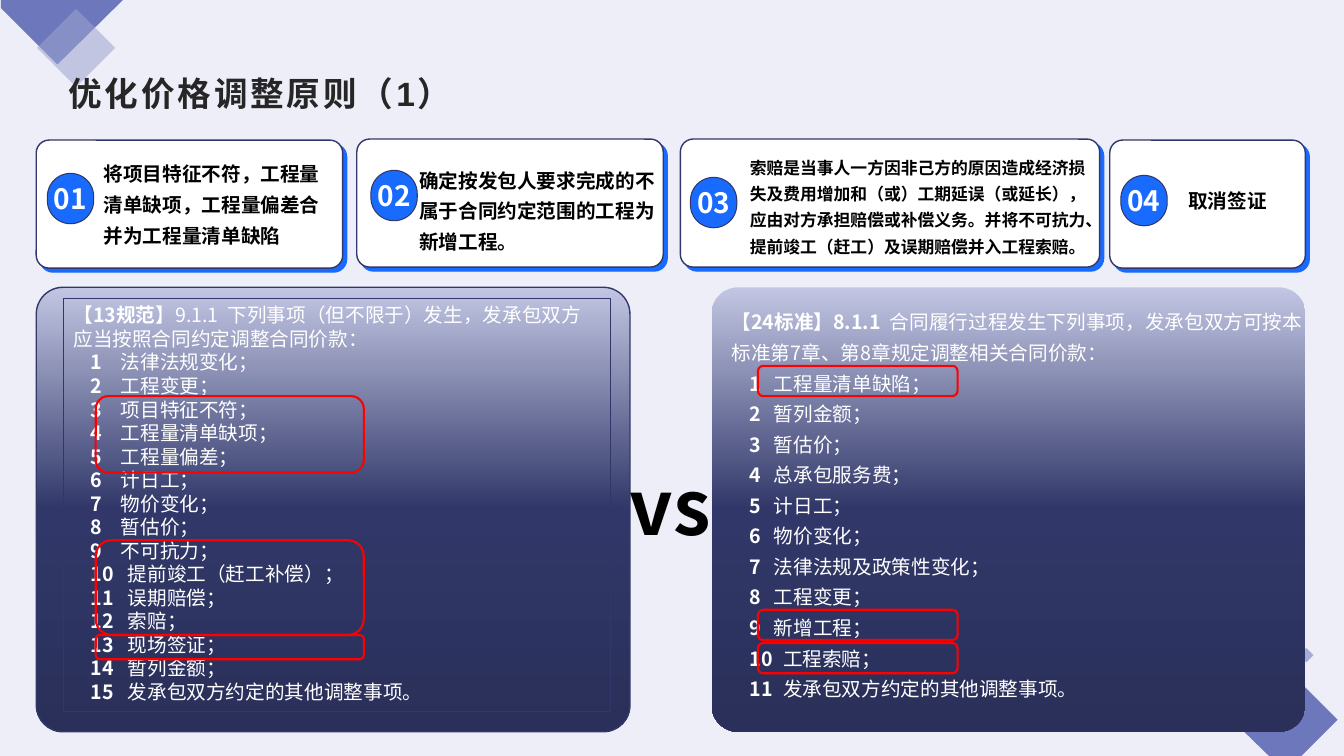
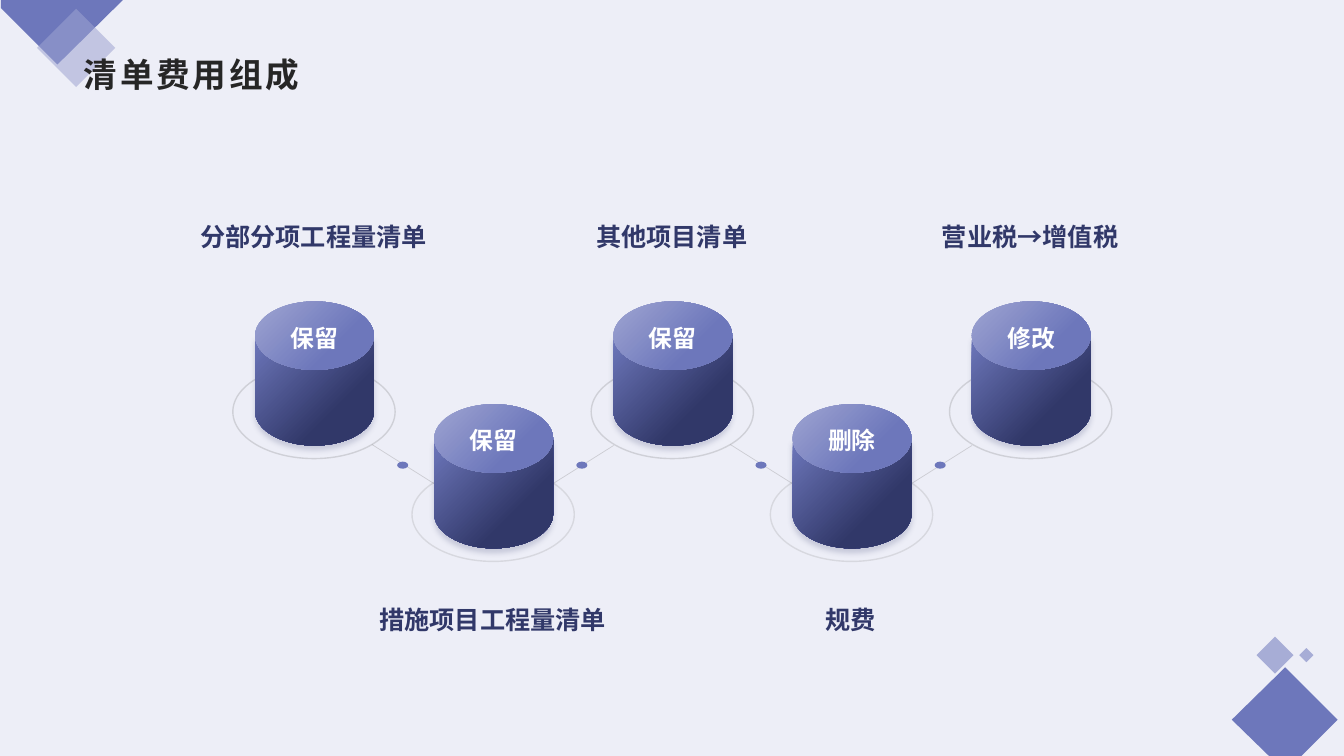
from lxml import etree
from pptx import Presentation
from pptx.dml.color import RGBColor
from pptx.enum.shapes import MSO_CONNECTOR, MSO_SHAPE
from pptx.enum.text import MSO_ANCHOR, MSO_AUTO_SIZE, PP_ALIGN
from pptx.oxml.ns import qn
from pptx.util import Inches, Pt

# Shared look
PALE = RGBColor(0xED, 0xEE, 0xF7)
VIOLET = RGBColor(0x6D, 0x77, 0xBB)
LILAC = RGBColor(0x9E, 0xA4, 0xD2)
MIST = RGBColor(0xC2, 0xC6, 0xE3)
NAVY = RGBColor(0x31, 0x38, 0x69)
DEEP = RGBColor(0x2A, 0x30, 0x59)
BLUE = RGBColor(0x19, 0x6B, 0xFF)
RED = RGBColor(0xFF, 0, 0)
INK = RGBColor(0x26, 0x26, 0x26)
GREY = RGBColor(0x80, 0x80, 0x80)
DARK_GREY = RGBColor(0x59, 0x59, 0x59)
WHITE = RGBColor(0xFF, 0xFF, 0xFF)
BLACK = RGBColor(0, 0, 0)
CJK = "Noto Sans CJK SC"
INSETS = (0.1, 0.05, 0.1, 0.05)
PANEL_GRAD = ([(0, MIST), (50, NAVY), (100, DEEP)], 90)
BODY_GRAD = ([(0, VIOLET), (68, NAVY)], 45)
LID_GRAD = ([(0, LILAC), (68, VIOLET)], 45)
CARD_SHADOW = dict(color=BLUE, alpha=100, blur=0, dist=4, angle=45)
SOFT_SHADOW = dict(color=NAVY, alpha=20, blur=4, dist=3, angle=90)

# Content: slide 1
TITLE_1 = ("优化价格调整原则（1）", (0.58, 0.67, 12, 0.77))
CARDS = [  # number, card box, badge position, text box, size, anchor, text
    ("01", (0.36, 1.39, 3.04, 1.27), (0.47, 1.72), (0.93, 1.48, 2.46, 1.02), 14,
     MSO_ANCHOR.BOTTOM, "将项目特征不符，工程量清单缺项，工程量偏差合并为工程量清单缺陷"),
    ("02", (3.54, 1.38, 3.04, 1.27), (3.68, 1.69), (4.06, 1.48, 2.55, 1.08), 14,
     MSO_ANCHOR.BOTTOM, "确定按发包人要求完成的不属于合同约定范围的工程为新增工程。"),
    ("03", (6.75, 1.38, 4.16, 1.27), (6.85, 1.76), (7.34, 1.39, 3.58, 1.27), 12,
     MSO_ANCHOR.MIDDLE, "索赔是当事人一方因非己方的原因造成经济损失及费用增加和（或）工期延误"
     "（或延长），应由对方承担赔偿或补偿义务。并将不可抗力、提前竣工（赶工）及误期赔偿并入工程索赔。"),
    ("04", (11.01, 1.39, 1.94, 1.27), (11.12, 1.74), (11.69, 1.72, 1.26, 0.44), 14,
     MSO_ANCHOR.BOTTOM, "取消签证"),
]
CLAUSES = [
    dict(panel=0.36, edge=NAVY, box=(0.63, 2.96, 5.43, 4.1), frame=NAVY, spacing=1.0,
         head=[("【13规范", True),
               ("】9.1.1  下列事项（但不限于）发生，发承包双方应当按照合同约定调整合同价款：", False)],
         number=0.17, text=(0.47, 0.54),
         items=["法律法规变化；", "工程变更；", "项目特征不符；", "工程量清单缺项；",
                "工程量偏差；", "计日工；", "物价变化；", "暂估价；", "不可抗力；",
                "提前竣工（赶工补偿）；", "误期赔偿；", "索赔；", "现场签证；",
                "暂列金额；", "发承包双方约定的其他调整事项。"],
         marks=(0.95, 2.66, [(3.93, 0.76), (5.36, 0.94), (6.3, 0.24)])),
    dict(panel=7.06, edge=None, box=(7.16, 2.96, 5.92, 4.1), frame=None, spacing=1.3,
         head=[("【24标准】8.1.1  ", True),
               ("合同履行过程发生下列事项，发承包双方可按本标准第7章、第8章规定调整相关合同价款：", False)],
         number=0.18, text=(0.42, 0.51),
         items=["工程量清单缺陷；", "暂列金额；", "暂估价；", "总承包服务费；", "计日工；",
                "物价变化；", "法律法规及政策性变化；", "工程变更；", "新增工程；",
                "工程索赔；", "发承包双方约定的其他调整事项。"],
         marks=(7.52, 1.98, [(3.63, 0.3), (6.05, 0.3), (6.38, 0.3)])),
]

# Content: slide 2
TITLE_2 = ("清单费用组成", (0.73, 0.48, 11.87, 0.48))
FEES = [("分部分项工程量清单", "保留"), ("措施项目工程量清单", "保留"),
        ("其他项目清单", "保留"), ("规费", "删除"), ("营业税→增值税", "修改")]
FIRST_X, LAST_X = 2.53, 9.64


def inches(values):
    return [Inches(v) for v in values]


def sub(parent, tag, **attrs):
    return etree.SubElement(parent, qn(tag), {k: str(v) for k, v in attrs.items()})


def set_alpha(fill_parent, percent):
    clr = next(fill_parent.iter(qn("a:srgbClr")))
    sub(clr, "a:alpha", val=percent * 1000)


def paint(sp, fill=None, line=None, width=0.75, alpha=None, line_alpha=None, shadow=None):
    """Fill (colour or gradient), outline and shadow of a shape."""
    sp.shadow.inherit = False
    if fill is None:
        sp.fill.background()
    else:
        sp.fill.solid()
        sp.fill.fore_color.rgb = fill if isinstance(fill, RGBColor) else WHITE
    sppr = sp._element.spPr
    solid = sppr.find(qn("a:solidFill"))
    if isinstance(fill, tuple) and not isinstance(fill, RGBColor):
        stops, angle = fill
        grad = etree.Element(qn("a:gradFill"), rotWithShape="1")
        gs_list = sub(grad, "a:gsLst")
        for pos, color in stops:
            sub(sub(gs_list, "a:gs", pos=pos * 1000), "a:srgbClr", val=color)
        sub(grad, "a:lin", ang=angle * 60000, scaled=0)
        sppr.replace(solid, grad)
    elif alpha:
        set_alpha(solid, alpha)
    if line is None:
        sp.line.fill.background()
    else:
        sp.line.color.rgb = line
        sp.line.width = Pt(width)
        if line_alpha:
            set_alpha(sppr.find(qn("a:ln")), line_alpha)
    if shadow:
        outer = sub(sppr.find(qn("a:effectLst")), "a:outerShdw", blurRad=Pt(shadow["blur"]),
                    dist=Pt(shadow["dist"]), dir=shadow["angle"] * 60000,
                    algn="ctr", rotWithShape=0)
        sub(sub(outer, "a:srgbClr", val=shadow["color"]), "a:alpha", val=shadow["alpha"] * 1000)
    return sp


def add_shape(s, kind, box, adj=None, **look):
    sp = s.shapes.add_shape(kind, *inches(box))
    if adj is not None:
        sp.adjustments[0] = adj
    return paint(sp, **look)


def add_polygon(s, points, **look):
    pts = [tuple(inches(pt)) for pt in points]
    fb = s.shapes.build_freeform(*pts[0], scale=1.0)
    fb.add_line_segments(pts[1:], close=True)
    return paint(fb.convert_to_shape(), **look)


def add_run(p, text, size, color, bold=True, font=CJK):
    r = p.add_run()
    r.text = text
    for name, value in dict(size=Pt(size), bold=bold, name=font).items():
        setattr(r.font, name, value)
    r.font.color.rgb = color
    sub(r._r.get_or_add_rPr(), "a:ea", typeface=CJK)
    return r


def set_frame(sp, anchor=MSO_ANCHOR.TOP, insets=INSETS, wrap=True):
    tf = sp.text_frame
    left, top, right, bottom = inches(insets)
    fmt = dict(word_wrap=wrap, auto_size=MSO_AUTO_SIZE.NONE, vertical_anchor=anchor,
               margin_left=left, margin_top=top, margin_right=right, margin_bottom=bottom)
    for name, value in fmt.items():
        setattr(tf, name, value)
    return tf


def write(sp, text, size, color, align=PP_ALIGN.LEFT, spacing=1.0, **frame):
    p = set_frame(sp, **frame).paragraphs[0]
    p.alignment, p.line_spacing = align, spacing
    return add_run(p, text, size, color)


def add_text(s, box, *args, **kw):
    return write(s.shapes.add_textbox(*inches(box)), *args, **kw)


def add_slide(prs, title):
    s = prs.slides.add_slide(prs.slide_layouts[5])
    text, box = title
    sp = s.shapes.title
    sp.left, sp.top, sp.width, sp.height = inches(box)
    p = set_frame(sp).paragraphs[0]
    p.alignment = PP_ALIGN.LEFT
    r = add_run(p, text, 24, INK, font="Arial")
    r._r.get_or_add_rPr().set("spc", "200")
    return s


def decorate_layout(prs, s):
    """Background and corner diamonds, moved from slide s to its layout."""
    fill = prs.slide_master.background.fill
    fill.solid()
    fill.fore_color.rgb = PALE
    layout = s.slide_layout
    for ph in list(layout.placeholders)[1:]:
        ph._element.getparent().remove(ph._element)
    parts = [
        add_polygon(s, [(12.75, 6.62), (13.27, 7.14), (12.91, 7.5), (12.59, 7.5), (12.22, 7.14)],
                    fill=VIOLET),
        add_polygon(s, [(0.01, 0), (1.22, 0), (0.57, 0.64), (0.01, 0.08)], fill=VIOLET)]
    for x, y, side, color in [(12.52, 6.37, 0.26, VIOLET), (12.91, 6.45, 0.1, VIOLET),
                              (0.48, 0.2, 0.55, LILAC)]:
        sp = add_shape(s, MSO_SHAPE.RECTANGLE, (x, y, side, side), fill=color, alpha=54)
        sp.rotation = 45
        parts.append(sp)
    for sp in parts:
        layout.shapes._spTree.append(sp._element)


def add_clause(s, c):
    """Numbered list under a heading."""
    tf = set_frame(add_shape(s, MSO_SHAPE.RECTANGLE, c["box"], line=c["frame"]))
    rows = [c["head"]] + [[(f"{n}\t", True), (item, False)]
                          for n, item in enumerate(c["items"], 1)]
    for n, row in enumerate(rows):
        p = tf.add_paragraph() if n else tf.paragraphs[0]
        p.alignment, p.line_spacing = PP_ALIGN.LEFT, c["spacing"]
        if n:
            left = c["text"][n >= 10]
            ppr = p._p.get_or_add_pPr()
            ppr.set("marL", str(Inches(left)))
            ppr.set("indent", str(Inches(c["number"] - left)))
        for text, bold in row:
            add_run(p, text, 14, WHITE, bold)


def build_principles(s):
    for c in CLAUSES:
        add_shape(s, MSO_SHAPE.ROUNDED_RECTANGLE, (c["panel"], 2.85, 5.89, 4.41), 0.06,
                  fill=PANEL_GRAD, line=c["edge"], width=1)
        add_clause(s, c)
    for number, card, (x, y), box, size, anchor, text in CARDS:
        add_shape(s, MSO_SHAPE.ROUNDED_RECTANGLE, card, 0.1, fill=WHITE, line=NAVY, width=1,
                  shadow=CARD_SHADOW)
        badge = add_shape(s, MSO_SHAPE.ROUNDED_RECTANGLE, (x, y, 0.46, 0.5), 0.5,
                          fill=BLUE, line=NAVY)
        write(badge, number, 20, WHITE, PP_ALIGN.CENTER, anchor=MSO_ANCHOR.MIDDLE,
              insets=(0.12,) * 4, wrap=False)
        add_text(s, box, text, size, BLACK, spacing=1.3, anchor=anchor)
    add_text(s, (6.15, 4.51, 1.35, 1.01), "vs", 54, BLACK)
    # Red frames around the changed items
    for x, width, spans in (c["marks"] for c in CLAUSES):
        for y, height in spans:
            add_shape(s, MSO_SHAPE.ROUNDED_RECTANGLE, (x, y, width, height), line=RED, width=1.5)


def add_cylinder(s, x, y, text):
    rx, ry = 0.59, 0.34
    mid, right, side, base = x + rx, x + 2 * rx, y + 1.09, y + 1.43
    bx, by = rx * 0.55, ry * 0.55  # Bezier handles of a quarter ellipse
    body = add_polygon(s, [
        (x, y + 0.35), (right, y + 0.35), (right, side),
        (right, side + by), (mid + bx, base), (mid, base),
        (mid - bx, base), (x, side + by), (x, side)], fill=BODY_GRAD, shadow=SOFT_SHADOW)
    # Turn the last six points into two curves
    lines = list(body._element.iter(qn("a:lnTo")))[2:8]
    for k in (0, 3):
        curve = etree.Element(qn("a:cubicBezTo"))
        lines[k].addprevious(curve)
        for line in lines[k:k + 3]:
            curve.append(line[0])
            line.getparent().remove(line)
    lid = add_shape(s, MSO_SHAPE.OVAL, (x, y, 2 * rx, 0.68), fill=LID_GRAD)
    write(lid, text, 17, WHITE, PP_ALIGN.CENTER, anchor=MSO_ANCHOR.MIDDLE,
          insets=(0.04, 0.04, 0.04, 0))


def build_fees(s):
    pitch = (LAST_X - FIRST_X) / (len(FEES) - 1)
    places = [(FIRST_X + pitch * n, 4.01 if n % 2 else 2.99) for n in range(len(FEES))]
    # Rings, labels and links, behind the cylinders
    for n, ((x, y), (label, _)) in enumerate(zip(places, FEES)):
        low = n % 2
        add_shape(s, MSO_SHAPE.OVAL, (x - 0.22, y + 0.63, 1.61, 0.93),
                  line=GREY if low else DARK_GREY, width=1, line_alpha=20)
        add_text(s, (x - 0.85, 5.87 if low else 2.07, 2.86, 0.43), label, 18, NAVY,
                 PP_ALIGN.CENTER, anchor=MSO_ANCHOR.BOTTOM, insets=(0,) * 4)
        if n < len(FEES) - 1:
            y1, y2 = (4.81, 4.42) if low else (4.41, 4.8)
            link = s.shapes.add_connector(MSO_CONNECTOR.STRAIGHT,
                                          *inches((x + 1.16, y1, x + 1.78, y2)))
            link.line.color.rgb = GREY
            link.line.width = Pt(0.5)
            sppr = link._element.spPr
            set_alpha(sppr.find(qn("a:ln")), 30)
            sub(sppr, "a:effectLst")
            add_shape(s, MSO_SHAPE.OVAL, (x + 1.41, 4.58, 0.11, 0.07), fill=VIOLET)
    for (x, y), (_, verdict) in zip(places, FEES):
        add_cylinder(s, x, y, verdict)


def main():
    prs = Presentation()
    prs.slide_width, prs.slide_height = Inches(40 / 3), Inches(7.5)
    principles = add_slide(prs, TITLE_1)
    decorate_layout(prs, principles)
    build_principles(principles)
    build_fees(add_slide(prs, TITLE_2))
    prs.save("out.pptx")


if __name__ == "__main__":
    main()
